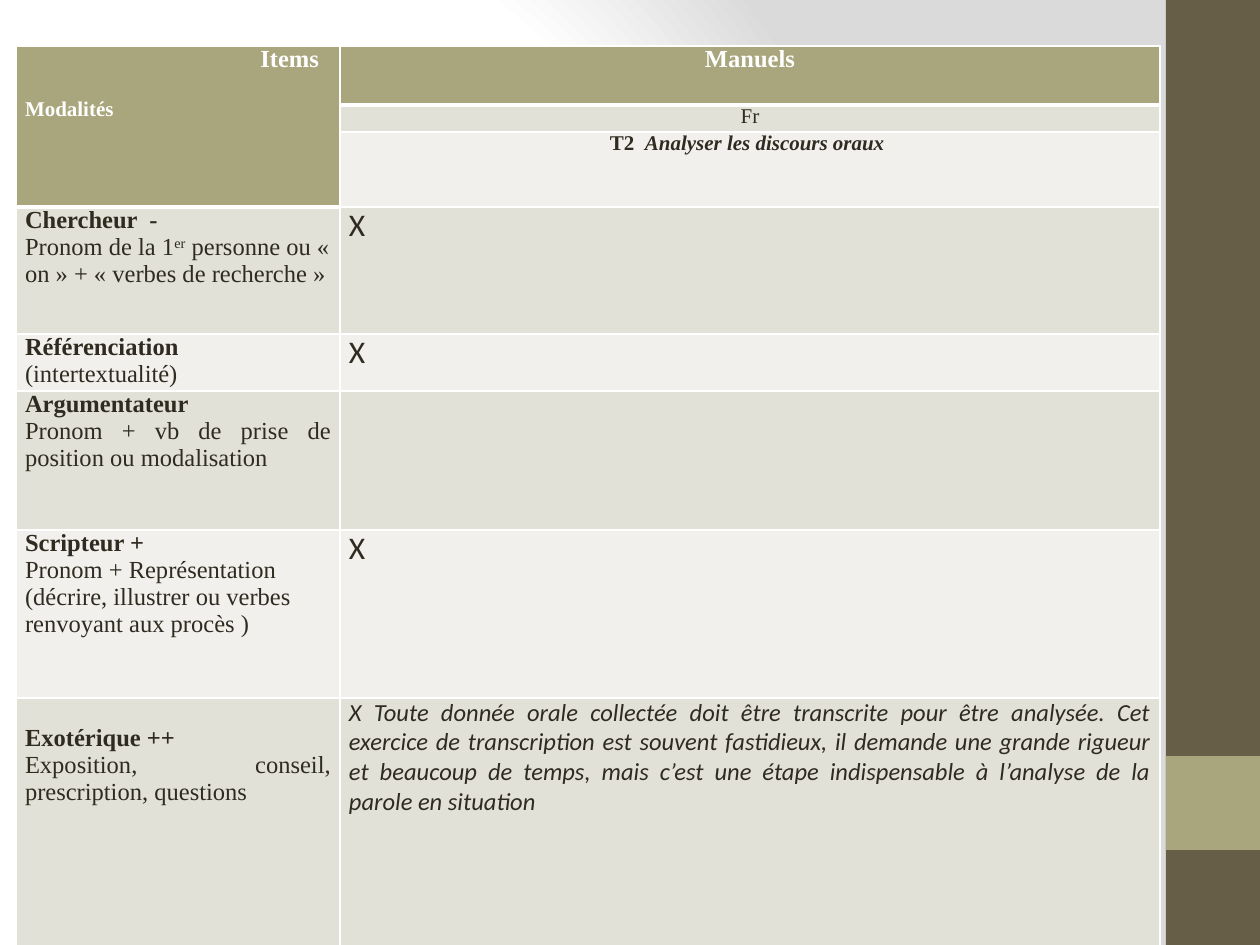
import lxml.etree
import pptx
import pptx.dml.color
import pptx.enum.shapes
import pptx.enum.text
import pptx.oxml
import pptx.oxml.ns
import pptx.util

PX = pptx.util.Inches(1) // 126
SERIF, SANS = "Times New Roman", "Calibri"
OLIVE, BROWN, INK, WHITE = "A9A57C", "675E47", "2F2B20", "FFFFFF"
BANDS = ("E2E1D7", "F1F0EC")
LEFT = pptx.enum.text.PP_ALIGN.LEFT
CENTER = pptx.enum.text.PP_ALIGN.CENTER
RIGHT = pptx.enum.text.PP_ALIGN.RIGHT
JUSTIFY = pptx.enum.text.PP_ALIGN.JUSTIFY
NAMESPACE = pptx.oxml.ns.nsdecls("a")


def color(value):
    return pptx.dml.color.RGBColor.from_string(value)


class SlideBuilder:
    """Draws elements in one shared style on the current slide."""

    def __init__(self, slide):
        self.slide = slide

    def background(self, stops):
        self.slide.background.fill.solid()
        properties = self.slide.element.find(".//" + pptx.oxml.ns.qn("p:bgPr"))
        marks = "".join(
            f'<a:gs pos="{position * 1000}"><a:srgbClr val="{value}"/></a:gs>'
            for position, value in stops
        )
        gradient = pptx.oxml.parse_xml(
            f'<a:gradFill {NAMESPACE} rotWithShape="1"><a:gsLst>{marks}</a:gsLst>'
            '<a:path path="circle"><a:fillToRect l="20000" t="50000" r="100000" b="50000"/>'
            "</a:path></a:gradFill>"
        )
        properties.replace(properties[0], gradient)

    def rectangle(self, left, top, width, height, fill):
        shape = self.slide.shapes.add_shape(
            pptx.enum.shapes.MSO_SHAPE.RECTANGLE,
            left * PX, top * PX, width * PX, height * PX,
        )
        shape.shadow.inherit = False
        shape.fill.solid()
        shape.fill.fore_color.rgb = color(fill)
        shape.line.fill.background()

    def table(self, left, top, widths, heights):
        table = self.slide.shapes.add_table(
            len(heights), len(widths), left * PX, top * PX,
            sum(widths) * PX, sum(heights) * PX,
        ).table
        table.first_row = table.horz_banding = False
        for column, width in zip(table.columns, widths):
            column.width = width * PX
        for row, height in zip(table.rows, heights):
            row.height = height * PX
        return table

    def cell(self, cell, fill, top_line=1, bottom_line=1):
        cell.margin_left = cell.margin_right = 9 * PX
        cell.margin_top = cell.margin_bottom = 0
        cell.fill.solid()
        cell.fill.fore_color.rgb = color(fill)
        properties = cell._tc.get_or_add_tcPr()
        lines = (("L", 1), ("R", 1), ("T", top_line), ("B", bottom_line))
        for index, (side, points) in enumerate(lines):
            properties.insert(index, pptx.oxml.parse_xml(
                f'<a:ln{side} {NAMESPACE} w="{pptx.util.Pt(points)}"><a:solidFill>'
                f'<a:srgbClr val="{WHITE}"/></a:solidFill></a:ln{side}>'
            ))

    def text(self, cell, paragraphs, size=14, font=SERIF, ink=INK):
        frame = cell.text_frame
        for index, (alignment, runs) in enumerate(paragraphs):
            paragraph = frame.add_paragraph() if index else frame.paragraphs[0]
            paragraph.alignment = alignment
            for content, style in runs:
                run = paragraph.add_run()
                run.text = content
                run.font.name = font
                run.font.size = pptx.util.Pt(size)
                run.font.bold = "b" in style
                run.font.italic = "i" in style
                run.font.color.rgb = color(ink)
                if "^" in style:
                    run._r.get_or_add_rPr().set("baseline", "30000")


MODALITIES = [
    [(JUSTIFY, [("Chercheur  -", "b")]),
     (LEFT, [("Pronom de la 1", ""), ("er", "^"),
             (" personne ou « on » + « verbes de recherche »", "")])],
    [(LEFT, [("Référenciation ", "b"), ("(intertextualité)", "")])],
    [(JUSTIFY, [("Argumentateur ", "b")]),
     (JUSTIFY, [("Pronom + vb de prise de position ou modalisation", "")])],
    [(JUSTIFY, [("Scripteur +", "b")]),
     (LEFT, [("Pronom + Représentation", "")]),
     (LEFT, [("(décrire, illustrer ou verbes renvoyant aux procès )", "")])],
    [(JUSTIFY, [("Exotérique ++", "b")]),
     (JUSTIFY, [("Exposition, conseil, prescription, questions", "")])],
]
MARKED = (True, True, False, True, False)
QUOTE = (
    "X Toute donnée orale collectée doit être transcrite pour être analysée. "
    "Cet exercice de transcription est souvent fastidieux, il demande une grande "
    "rigueur et beaucoup de temps, mais c’est une étape indispensable à l’analyse "
    "de la parole en situation"
)


def main():
    presentation = pptx.Presentation()
    presentation.slide_width = 1260 * PX
    presentation.slide_height = 945 * PX
    builder = SlideBuilder(presentation.slides.add_slide(presentation.slide_layouts[6]))

    builder.background([(0, WHITE), (75, WHITE), (100, "DADADA")])
    builder.rectangle(1166, 0, 94, 945, BROWN)
    builder.rectangle(1166, 756, 94, 94, OLIVE)

    table = builder.table(16, 46, (324, 820), (59, 27, 74, 127, 57, 139, 168, 248))
    table.cell(0, 0).merge(table.cell(2, 0))
    for row in range(8):
        band = BANDS[(row + 1) % 2]
        builder.cell(table.cell(row, 0), OLIVE if row < 3 else band,
                     top_line=3 if row == 3 else 1, bottom_line=3 if row in (0, 2) else 1)
        builder.cell(table.cell(row, 1), OLIVE if row == 0 else band,
                     top_line=3 if row == 1 else 1, bottom_line=3 if row == 0 else 1)

    corner = table.cell(0, 0)
    corner.margin_right = 21 * PX
    builder.text(corner, [(RIGHT, [("Items", "b")]), (LEFT, [("Modalités", "b")])], ink=WHITE)
    modalities = corner.text_frame.paragraphs[1]
    modalities.space_before = pptx.util.Pt(14)
    modalities.runs[0].font.size = pptx.util.Pt(12)

    builder.text(table.cell(0, 1), [(CENTER, [("Manuels", "b")])], ink=WHITE)
    builder.text(table.cell(1, 1), [(CENTER, [("Fr", "")])], size=12)
    builder.text(table.cell(2, 1), [
        (CENTER, [("T2  ", "b"), ("Analyser les discours oraux ", "bi")]),
    ], size=12)

    for row, (paragraphs, marked) in enumerate(zip(MODALITIES, MARKED), start=3):
        builder.text(table.cell(row, 0), paragraphs)
        if marked:
            builder.text(table.cell(row, 1), [(LEFT, [("X", "")])], size=18, font=SANS)
    table.cell(7, 0).margin_top = 27 * PX
    builder.text(table.cell(7, 1), [(JUSTIFY, [(QUOTE, "i")])], font=SANS)

    presentation.save("out.pptx")


if __name__ == "__main__":
    main()
